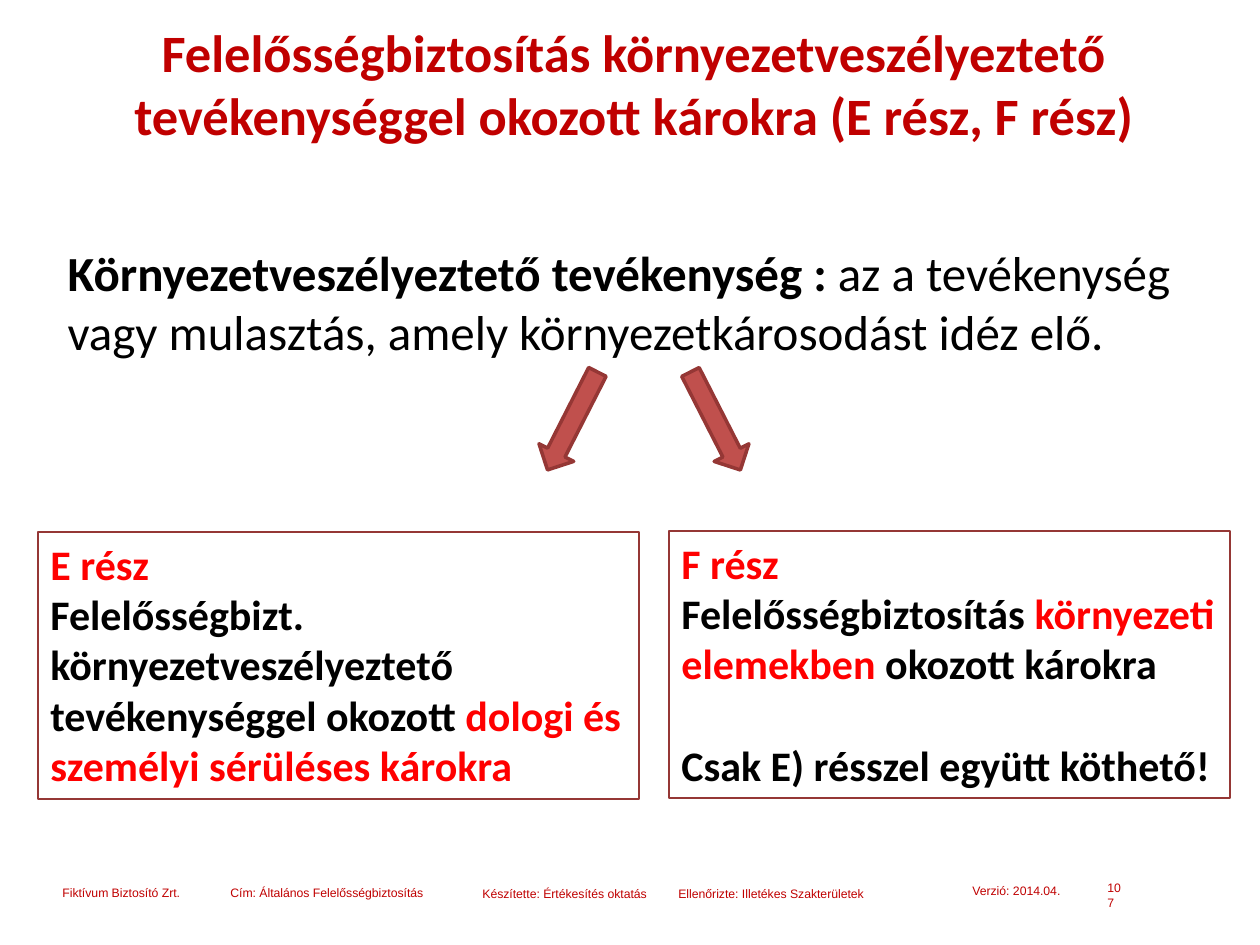
from pptx import Presentation
from pptx import util as u
from pptx.dml.color import RGBColor
from pptx.enum import shapes, text
from pptx.oxml.ns import qn

PX = u.Inches(1) / 126
DARK_RED = RGBColor(0xC0, 0x00, 0x00)
RED = RGBColor(0xFF, 0x00, 0x00)
BLACK = RGBColor(0x00, 0x00, 0x00)
BORDER = RGBColor(0x95, 0x37, 0x35)
ARROW_FILL = RGBColor(0xC0, 0x50, 0x4D)


def emu(*lengths):
    return [u.Emu(round(length * PX)) for length in lengths]


def place(shape, box):
    shape.left, shape.top, shape.width, shape.height = emu(*box)


def add_run(paragraph, words, size, color, bold=False, font="Calibri"):
    run = paragraph.add_run()
    run.text = words
    run.font.name = font
    run.font.size = u.Pt(size)
    run.font.bold = bold
    run.font.color.rgb = color


def add_footer(slide, box, items):
    """Small labels, each given as left, top, width, height inside the box."""
    for words, (left, top, width, height) in items:
        label = slide.shapes.add_textbox(*emu(box[0] + left, box[1] + top, width, height))
        label.text_frame.word_wrap = True
        add_run(label.text_frame.paragraphs[0], words, 7, DARK_RED, font="Arial")


def fill_title(slide, box, words):
    title = slide.shapes.title
    place(title, box)
    frame = title.text_frame
    frame.auto_size = text.MSO_AUTO_SIZE.NONE
    frame.vertical_anchor = text.MSO_ANCHOR.MIDDLE
    paragraph = frame.paragraphs[0]
    paragraph.alignment = text.PP_ALIGN.CENTER
    add_run(paragraph, words, 30, DARK_RED, bold=True)


def fill_definition(slide, box, term, meaning):
    body = slide.placeholders[1]
    place(body, box)
    frame = body.text_frame
    frame.auto_size = text.MSO_AUTO_SIZE.NONE
    paragraph = frame.paragraphs[0]
    properties = paragraph._p.get_or_add_pPr()
    properties.set("marL", "0")
    properties.set("indent", "0")
    properties.append(properties.makeelement(qn("a:buNone"), {}))
    paragraph.space_before = u.Pt(0)
    add_run(paragraph, term, 28, BLACK, bold=True)
    add_run(paragraph, meaning, 28, BLACK)


def add_part(slide, box, paragraphs):
    """Outlined box; each paragraph is its space before and its coloured runs."""
    shape = slide.shapes.add_shape(shapes.MSO_SHAPE.RECTANGLE, *emu(*box))
    shape.shadow.inherit = False
    shape.fill.background()
    shape.line.color.rgb = BORDER
    shape.line.width = u.Pt(1.5)
    frame = shape.text_frame
    frame.word_wrap = True
    frame.vertical_anchor = text.MSO_ANCHOR.TOP
    for index, (gap, runs) in enumerate(paragraphs):
        paragraph = frame.add_paragraph() if index else frame.paragraphs[0]
        paragraph.alignment = text.PP_ALIGN.LEFT
        paragraph.space_before = u.Pt(gap)
        for words, color in runs:
            add_run(paragraph, words, 24, color, bold=True)


def add_arrow(slide, box, rotation):
    arrow = slide.shapes.add_shape(shapes.MSO_SHAPE.DOWN_ARROW, *emu(*box))
    arrow.rotation = rotation
    arrow.shadow.inherit = False
    arrow.fill.solid()
    arrow.fill.fore_color.rgb = ARROW_FILL
    arrow.line.color.rgb = BORDER
    arrow.line.width = u.Pt(2)


def main():
    presentation = Presentation()
    presentation.slide_width, presentation.slide_height = emu(1260, 945)
    slide = presentation.slides.add_slide(presentation.slide_layouts[1])

    # Footer
    add_footer(slide, (50, 874), [
        ("107", (1045, 0, 39, 29)),
        ("Fiktívum Biztosító Zrt.", (0, 5, 159, 28)),
        ("Cím: Általános Felelősségbiztosítás", (168, 5, 233, 28)),
        ("Készítette: Értékesítés oktatás", (420, 6, 207, 28)),
        ("Ellenőrizte: Illetékes Szakterületek", (616, 6, 262, 28)),
        ("Verzió: 2014.04.", (910, 3, 146, 28)),
    ])

    # Title and definition
    fill_title(slide, (49, 4, 1170, 159),
               "Felelősségbiztosítás környezetveszélyeztető "
               "tevékenységgel okozott károkra (E rész, F rész)")
    fill_definition(slide, (55, 236, 1179, 90),
                    "Környezetveszélyeztető tevékenység : ",
                    "az a tevékenység vagy mulasztás, amely környezetkárosodást idéz elő.")

    # The two parts of the insurance
    add_part(slide, (38, 532, 601, 267), [
        (0, [("E rész", RED)]),
        (0, [("Felelősségbizt. környezetveszélyeztető tevékenységgel okozott ", BLACK),
             ("dologi és személyi sérüléses károkra", RED)]),
    ])
    add_part(slide, (669, 531, 561, 267), [
        (0, [("F rész", RED)]),
        (0, [("Felelősségbiztosítás ", BLACK),
             ("környezeti elemekben", RED),
             (" okozott károkra", BLACK)]),
        (29, [("Csak E) résszel együtt köthető!", BLACK)]),
    ])

    # Arrows from the definition to the parts
    for left, rotation in ((553, 27), (696, 333)):
        add_arrow(slide, (left, 366, 39, 110), rotation)

    presentation.save("out.pptx")


if __name__ == "__main__":
    main()
